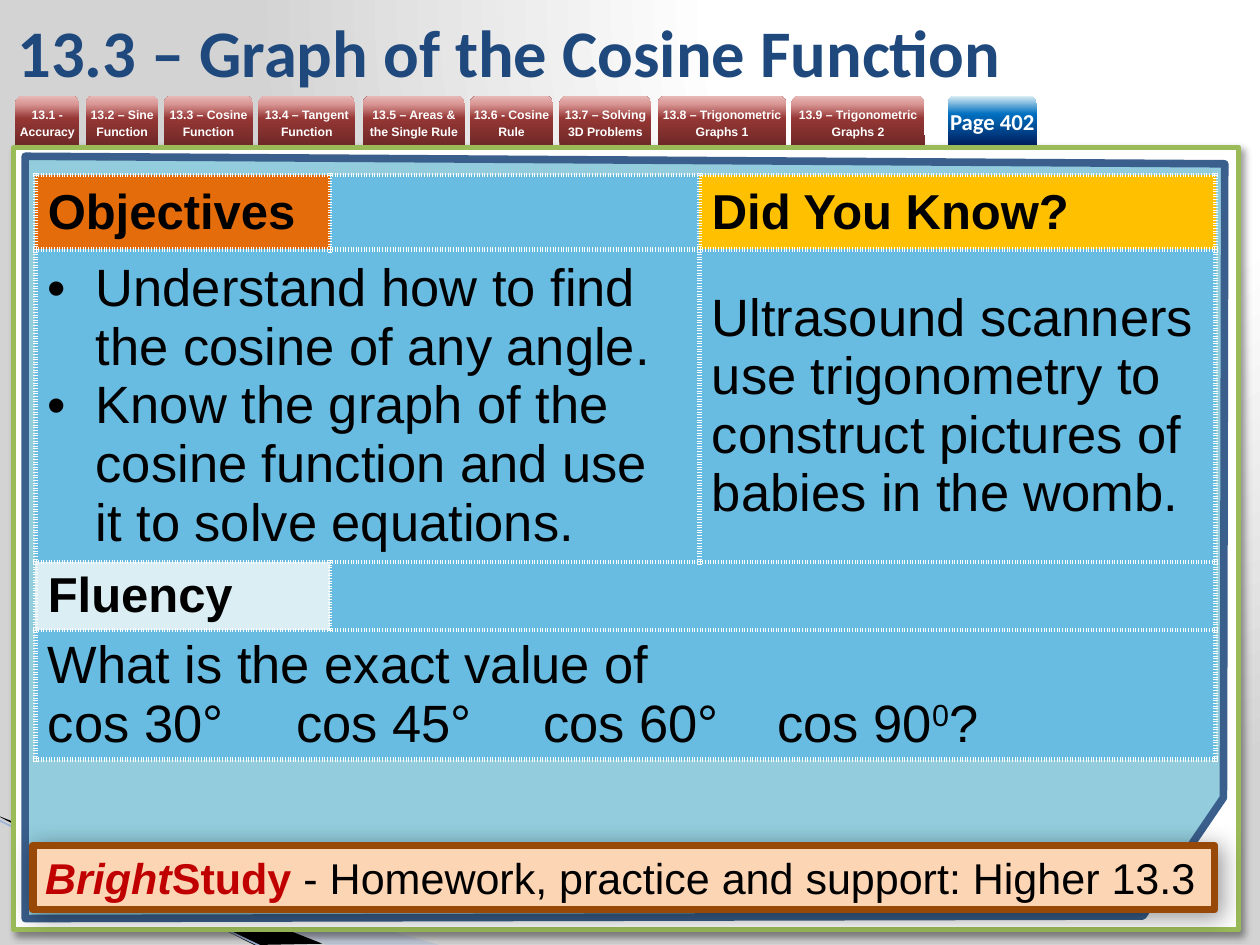
"""Build the lesson slide on the graph of the cosine function."""
from dataclasses import dataclass, field

from lxml.etree import SubElement
from pptx import Presentation
from pptx.dml.color import RGBColor
from pptx.enum.shapes import MSO_CONNECTOR, MSO_SHAPE
from pptx.enum.text import MSO_ANCHOR, PP_ALIGN
from pptx.oxml import parse_xml
from pptx.oxml.ns import nsdecls, qn
from pptx.util import Inches, Pt

COLOURS = {
    "white": "FFFFFF", "black": "000000", "grey": "D3D3D3", "title": "1F497D",
    "pale_blue": "A7B9DB", "stripe": "9EB3D6", "green": "9BBB59",
    "panel": "93CDDD", "panel_edge": "3A5F8C", "cell": "68BCE1",
    "orange": "E46C0A", "yellow": "FFC000", "ice": "DBEEF4",
    "peach": "FCD5B5", "brown": "984807", "red": "C00000",
}
RED_STOPS = [(0, "6F2927"), (54, "953735"), (83, "D99694"), (100, "E6B9B8")]
BLUE_STOPS = [(0, "002060"), (63, "0070C0"), (100, "DBEEF4")]
UPWARD = '<a:lin {ns} ang="16200000" scaled="0"/>'
FROM_TOP_RIGHT = '<a:path {ns} path="circle"><a:fillToRect l="65000" b="98000"/></a:path>'

HEADING = {"name": "Arial", "size": Pt(28), "bold": True}
BODY = {"name": "Arial", "size": Pt(30), "bold": False}
TAB_FONT = {"name": "Arial", "size": Pt(7), "bold": True}
PAGE_FONT = {"name": "Calibri", "size": Pt(13), "bold": True}
TITLE_FONT = {"name": "Calibri", "size": Pt(38), "bold": True}
BAR_FONT = {"name": "Arial", "size": Pt(24.6), "bold": True}


@dataclass
class Tab:
    text: str
    left: float
    width: float


@dataclass
class TextRun:
    text: str
    style: dict
    colour: str = "black"
    baseline: int = 0


@dataclass
class Cell:
    row: int
    column: int
    fill: str
    paragraphs: list[list[TextRun]] = field(default_factory=list)
    span: int = 1
    bulleted: bool = False
    stops: tuple[float, ...] = ()


TABS = [
    Tab("13.1 - Accuracy", 0.12, 0.51),
    Tab("13.2 – Sine Function", 0.68, 0.58),
    Tab("13.3 – Cosine Function", 1.3, 0.71),
    Tab("13.4 – Tangent Function", 2.05, 0.77),
    Tab("13.5 – Areas & the Single Rule", 2.88, 0.81),
    Tab("13.6 - Cosine Rule", 3.73, 0.66),
    Tab("13.7 – Solving 3D Problems", 4.44, 0.73),
    Tab("13.8 – Trigonometric Graphs 1", 5.22, 1.02),
    Tab("13.9 – Trigonometric Graphs 2", 6.28, 1.06),
]
PAGE_TAB = Tab("Page 402", 7.52, 0.71)
CELLS = [
    Cell(0, 0, "orange", [[TextRun("Objectives", HEADING)]]),
    Cell(0, 1, "cell"),
    Cell(0, 2, "yellow", [[TextRun("Did You Know?", HEADING)]]),
    Cell(1, 0, "cell", [
        [TextRun("Understand how to find the cosine of any angle.", BODY)],
        [TextRun("Know the graph of the cosine function and use it to solve equations.", BODY)],
    ], span=2, bulleted=True),
    Cell(1, 2, "cell", [[TextRun(
        "Ultrasound scanners use trigonometry to construct pictures of babies in the womb.", BODY)]]),
    Cell(2, 0, "ice", [[TextRun("Fluency", HEADING)]]),
    Cell(2, 1, "cell", span=2),
    Cell(3, 0, "cell", [
        [TextRun("What is the exact value of", BODY)],
        [TextRun("cos 30°\tcos 45°\tcos 60°\tcos 90", BODY),
         TextRun("0", BODY, baseline=30000), TextRun("?", BODY)],
    ], span=3, stops=(1.97, 3.93, 5.79)),
]


def colour(name: str) -> RGBColor:
    return RGBColor.from_string(COLOURS[name])


def write_runs(paragraph, runs: list[TextRun]) -> None:
    for item in runs:
        run = paragraph.add_run()
        run.text = item.text
        for name, value in item.style.items():
            setattr(run.font, name, value)
        run.font.color.rgb = colour(item.colour)
        if item.baseline:
            run.font._element.set("baseline", str(item.baseline))


def set_gradient(fill, owner, stops: list[tuple[int, str]], direction: str) -> None:
    fill.gradient()
    gradient = owner.find(".//" + qn("a:gradFill"))
    for child in list(gradient):
        gradient.remove(child)
    stop_list = SubElement(gradient, qn("a:gsLst"))
    for position, value in stops:
        stop = SubElement(stop_list, qn("a:gs"), pos=str(position * 1000))
        SubElement(stop, qn("a:srgbClr"), val=value)
    gradient.append(parse_xml(direction.format(ns=nsdecls("a"))))


def style_shape(shape, fill: str, line: str = "", width: float = 0, blur: float = 0) -> None:
    shape.shadow.inherit = False
    shape.fill.solid()
    shape.fill.fore_color.rgb = colour(fill)
    if line:
        shape.line.color.rgb = colour(line)
        shape.line.width = Pt(width)
    else:
        shape.line.fill.background()
    if blur:
        effects = shape._element.spPr.find(qn("a:effectLst"))
        shadow = SubElement(effects, qn("a:outerShdw"), blurRad=str(Pt(blur)),
                            dist=str(Pt(3)), dir="2700000", algn="tl", rotWithShape="0")
        tint = SubElement(shadow, qn("a:srgbClr"), val=COLOURS["black"])
        SubElement(tint, qn("a:alpha"), val="40000")


def add_outline(slide, points: list[tuple[float, float]]):
    start, *others = [(Inches(x), Inches(y)) for x, y in points]
    builder = slide.shapes.build_freeform(*start, scale=1.0)
    builder.add_line_segments(others, close=True)
    return builder.convert_to_shape()


def add_box(slide, kind, left: float, top: float, width: float, height: float):
    return slide.shapes.add_shape(kind, Inches(left), Inches(top), Inches(width), Inches(height))


def add_tab(slide, tab: Tab, stops: list[tuple[int, str]], style: dict, spacing=None) -> None:
    shape = add_box(slide, MSO_SHAPE.ROUND_2_SAME_RECTANGLE, tab.left, 0.76, tab.width, 0.39)
    shape.shadow.inherit = False
    shape.line.fill.background()
    set_gradient(shape.fill, shape._element, stops, UPWARD)
    frame = shape.text_frame
    frame.word_wrap = True
    frame.vertical_anchor = MSO_ANCHOR.MIDDLE
    for side in ("left", "right", "top", "bottom"):
        setattr(frame, f"margin_{side}", 0)
    paragraph = frame.paragraphs[0]
    paragraph.alignment = PP_ALIGN.CENTER
    paragraph.line_spacing = spacing
    write_runs(paragraph, [TextRun(tab.text, style, "white")])


def add_borders(cell) -> None:
    properties = cell._tc.get_or_add_tcPr()
    for index, side in enumerate(("lnL", "lnR", "lnT", "lnB")):
        properties.insert(index, parse_xml(
            f'<a:{side} {nsdecls("a")} w="{Pt(3)}"><a:solidFill><a:srgbClr val="{COLOURS["white"]}"/>'
            f'</a:solidFill><a:prstDash val="sysDot"/></a:{side}>'))


def fill_cell(table, item: Cell) -> None:
    cell = table.cell(item.row, item.column)
    if item.span > 1:
        cell.merge(table.cell(item.row, item.column + item.span - 1))
    cell.vertical_anchor = MSO_ANCHOR.MIDDLE
    for offset in range(item.span):
        part = table.cell(item.row, item.column + offset)
        part.fill.solid()
        part.fill.fore_color.rgb = colour(item.fill)
        add_borders(part)
    for index, runs in enumerate(item.paragraphs):
        paragraph = cell.text_frame.add_paragraph() if index else cell.text_frame.paragraphs[0]
        properties = paragraph._p.get_or_add_pPr()
        if item.bulleted:
            properties.set("marL", str(Inches(0.38)))
            properties.set("indent", str(-Inches(0.38)))
            SubElement(properties, qn("a:buFont"), typeface="Arial")
            SubElement(properties, qn("a:buChar"), char="•")
        if item.stops:
            tab_list = SubElement(properties, qn("a:tabLst"))
            for stop in item.stops:
                SubElement(tab_list, qn("a:tab"), pos=str(Inches(stop)), algn="l")
        write_runs(paragraph, runs)


def add_backdrop(slide) -> None:
    set_gradient(slide.background.fill, slide._element,
                 [(0, COLOURS["white"]), (40, COLOURS["white"]), (100, COLOURS["grey"])], FROM_TOP_RIGHT)
    wedge = add_outline(slide, [(-0.01, 6.5), (3.49, 7.5), (2.59, 7.5), (-0.01, 6.49)])
    style_shape(wedge, "pale_blue")
    tint = wedge._element.spPr.find(".//" + qn("a:srgbClr"))
    SubElement(tint, qn("a:alpha"), val="40000")
    style_shape(add_outline(slide, [(0, 6.48), (2.56, 7.49), (2.02, 7.5), (0.01, 6.49)]), "black")
    stripe = slide.shapes.add_connector(
        MSO_CONNECTOR.STRAIGHT, Inches(-0.01), Inches(6.51), Inches(2.09), Inches(7.52))
    stripe.line.color.rgb = colour("stripe")
    stripe.line.width = Pt(0.95)
    SubElement(stripe._element.spPr, qn("a:effectLst"))
    style_shape(add_box(slide, MSO_SHAPE.RECTANGLE, 0.11, 1.17, 9.72, 6.21), "white", "green", 3, blur=4)
    panel = add_outline(slide, [(0.2, 1.24), (9.72, 1.3), (9.71, 6.33), (9.07, 7.27), (0.2, 7.29)])
    style_shape(panel, "panel", "panel_edge", 4.33)


def add_title(slide) -> None:
    title = slide.shapes.title
    title.left, title.top, title.width, title.height = map(Inches, (0.04, 0.05, 8.27, 0.71))
    title.text_frame.vertical_anchor = MSO_ANCHOR.MIDDLE
    paragraph = title.text_frame.paragraphs[0]
    paragraph.alignment = PP_ALIGN.LEFT
    write_runs(paragraph, [TextRun("13.3 – Graph of the Cosine Function", TITLE_FONT, "title")])


def add_lesson_table(slide) -> None:
    widths, heights = (2.34, 2.93, 4.1), (0.59, 2.48, 0.54, 1.03)
    table = slide.shapes.add_table(len(heights), len(widths), Inches(0.28), Inches(1.39),
                                   Inches(sum(widths)), Inches(sum(heights))).table
    table.first_row = table.horz_banding = False
    for column, width in zip(table.columns, widths):
        column.width = Inches(width)
    for row, height in zip(table.rows, heights):
        row.height = Inches(height)
    for item in CELLS:
        fill_cell(table, item)


def add_homework_bar(slide) -> None:
    bar = add_box(slide, MSO_SHAPE.RECTANGLE, 0.26, 6.71, 9.38, 0.51)
    style_shape(bar, "peach", "brown", 4.33, blur=13)
    bar.text_frame.word_wrap = True
    bar.text_frame.vertical_anchor = MSO_ANCHOR.MIDDLE
    paragraph = bar.text_frame.paragraphs[0]
    paragraph.alignment = PP_ALIGN.LEFT
    write_runs(paragraph, [
        TextRun("Bright", BAR_FONT | {"italic": True}, "red"),
        TextRun("Study ", BAR_FONT, "red"),
        TextRun("- Homework, practice and support: Higher 13.3", BAR_FONT | {"bold": False}),
    ])


def main() -> None:
    presentation = Presentation()
    presentation.slide_width, presentation.slide_height = Inches(10), Inches(7.5)
    slide = presentation.slides.add_slide(presentation.slide_layouts[5])
    add_backdrop(slide)
    for tab in TABS:
        add_tab(slide, tab, RED_STOPS, TAB_FONT, Pt(10))
    add_title(slide)
    add_tab(slide, PAGE_TAB, BLUE_STOPS, PAGE_FONT)
    add_lesson_table(slide)
    add_homework_bar(slide)
    presentation.save("out.pptx")


if __name__ == "__main__":
    main()
